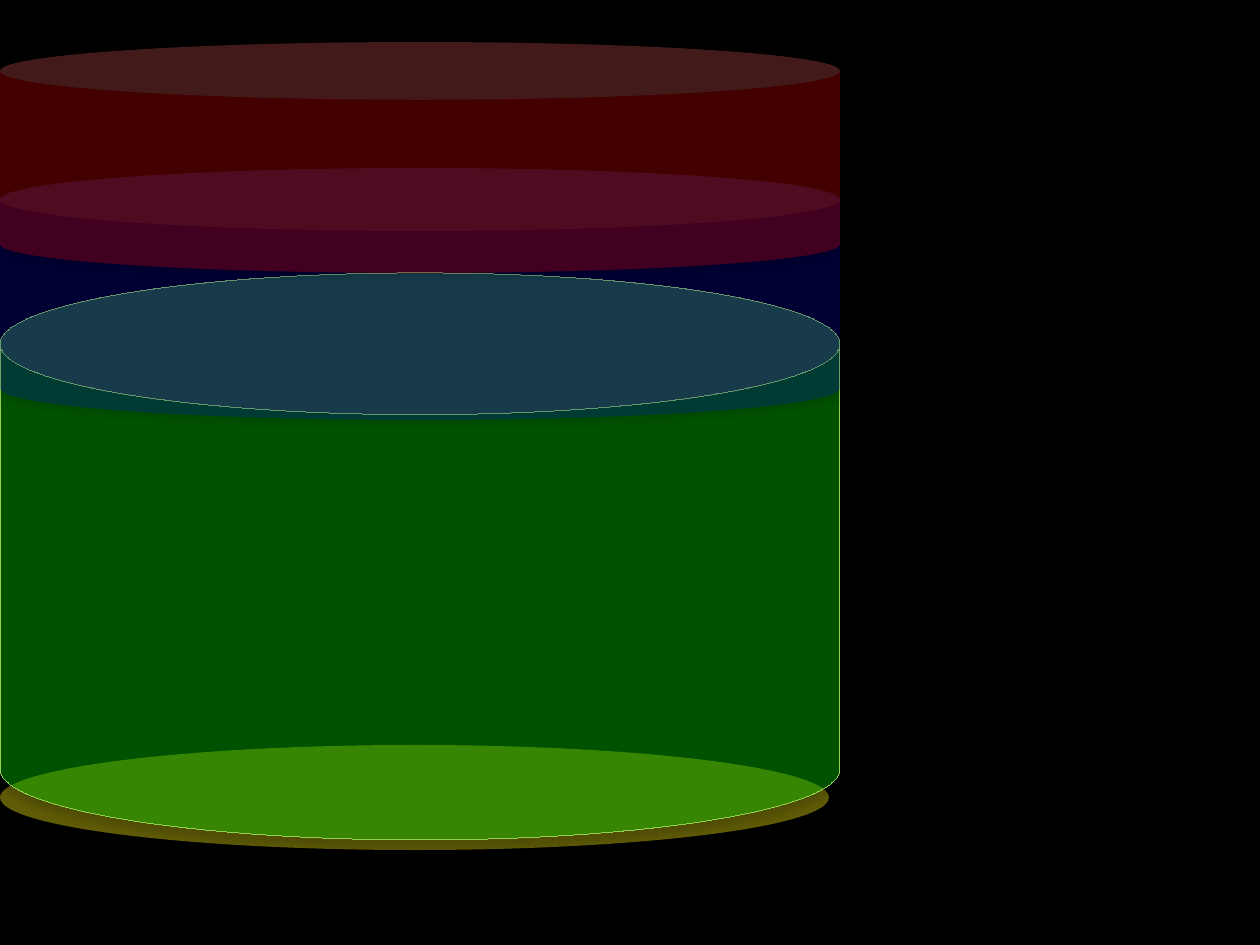
"""Build a slide of three stacked translucent cylinders above a flat disc."""
from lxml import etree
from pptx import Presentation
from pptx.dml.color import RGBColor
from pptx.enum.shapes import MSO_SHAPE
from pptx.oxml.ns import qn
from pptx.util import Emu, Pt

CAN = MSO_SHAPE.CAN
OVAL = MSO_SHAPE.OVAL
SCALE = 914400 / 126
THEME = {
    "background": "000000",
    "disc": "EEE412",
    "green": "00FF00",
    "blue": "0000FF",
    "red": "FF0000",
    "outline": "92D050",
    "shadow": "000000",
}


def px(length):
    return Emu(round(length * SCALE))


def set_alpha(color, percent):
    etree.SubElement(color, qn("a:alpha"), val=str(percent * 1000))


presentation = Presentation()
presentation.slide_width = px(1260)
presentation.slide_height = px(945)
slide = presentation.slides.add_slide(presentation.slide_layouts[6])
slide.background.fill.solid()
slide.background.fill.fore_color.rgb = RGBColor.from_string(THEME["background"])

layers = [
    (OVAL, 745, 829, 105, "disc", 40, None),
    (CAN, 273, 840, 567, "green", 32, "outline"),
    (CAN, 168, 840, 252, "blue", 20, None),
    (CAN, 42, 840, 231, "red", 26, None),
]

for kind, top, width, height, color, opacity, outline in layers:
    shape = slide.shapes.add_shape(kind, 0, px(top), px(width), px(height))
    shape.element.remove(shape.element.find(qn("p:style")))
    shape.fill.solid()
    shape.fill.fore_color.rgb = RGBColor.from_string(THEME[color])
    properties = shape.element.spPr
    set_alpha(properties.find(f"{qn('a:solidFill')}/{qn('a:srgbClr')}"), opacity)
    if outline:
        shape.line.color.rgb = RGBColor.from_string(THEME[outline])
    else:
        shape.line.fill.background()
    shape.shadow.inherit = False
    shadow = etree.SubElement(
        properties.find(qn("a:effectLst")), qn("a:outerShdw"),
        blurRad=str(Pt(5)), dist=str(Pt(3)), dir="5400000", rotWithShape="0",
    )
    set_alpha(etree.SubElement(shadow, qn("a:srgbClr"), val=THEME["shadow"]), 45)

presentation.save("out.pptx")
